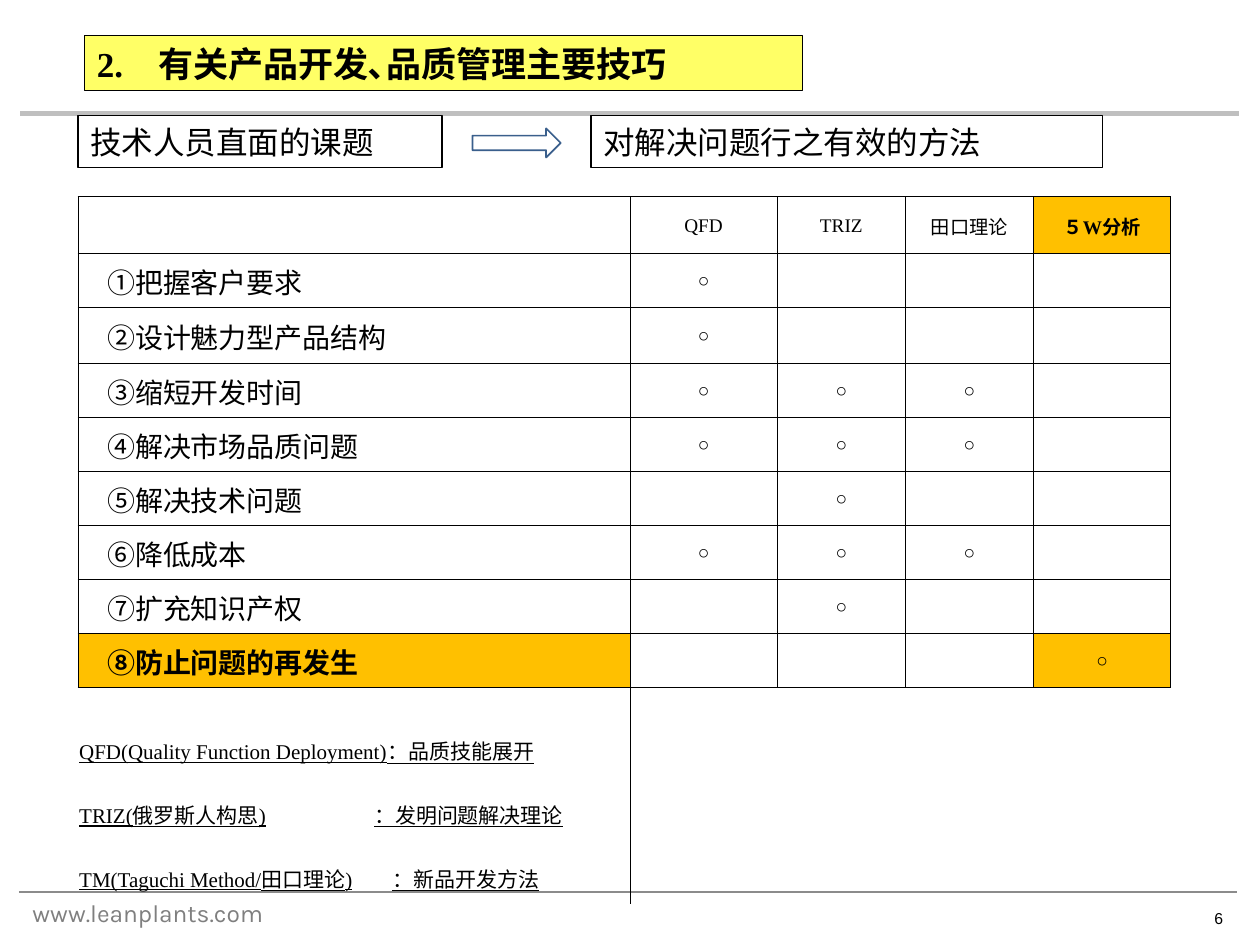
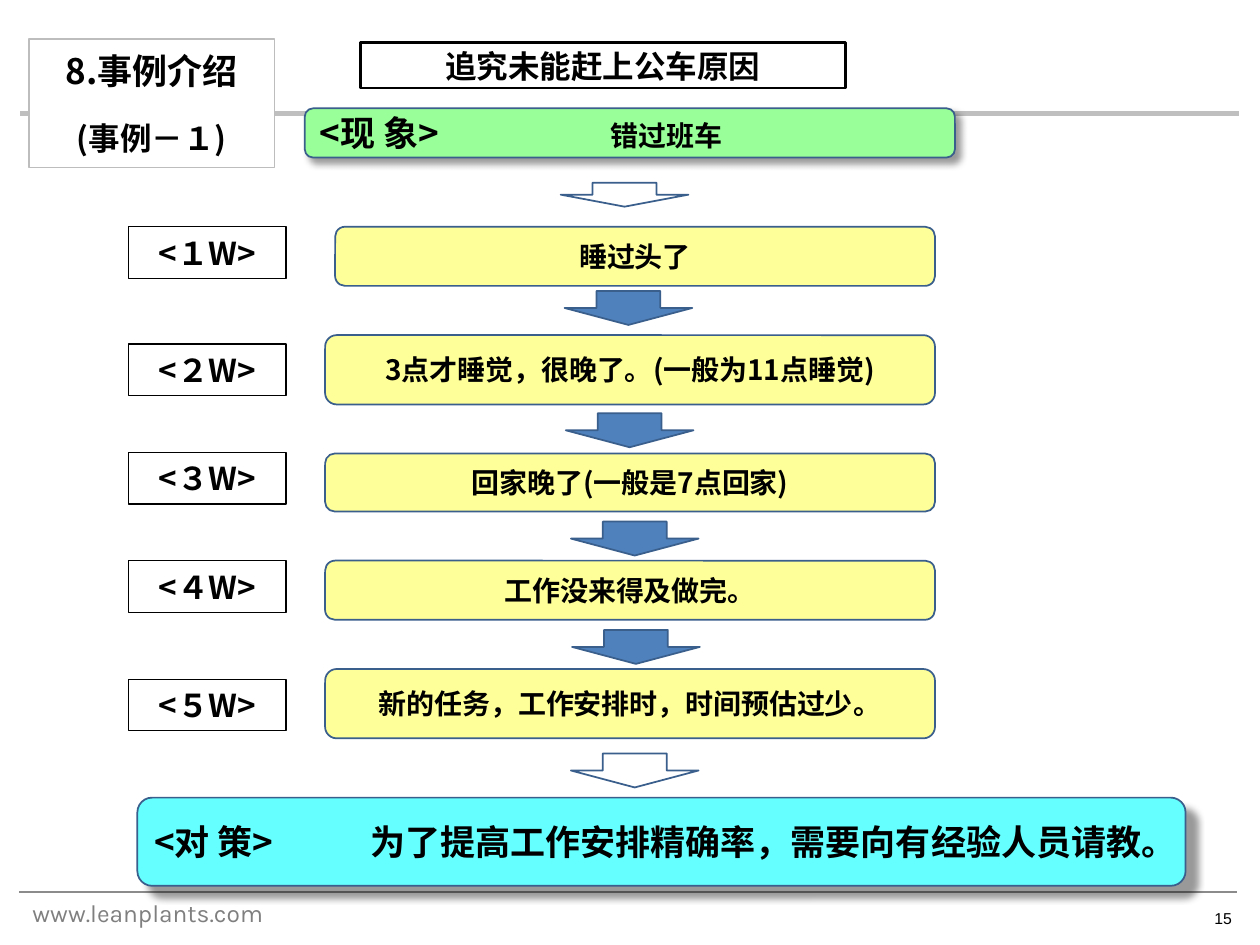
from lxml.etree import SubElement
from pptx import Presentation
from pptx.dml.color import RGBColor
from pptx.enum.shapes import MSO_CONNECTOR, MSO_SHAPE
from pptx.enum.text import MSO_ANCHOR, MSO_AUTO_SIZE, PP_ALIGN
from pptx.oxml.ns import qn
from pptx.util import Pt

COLORS = {
    "black": "000000", "white": "FFFFFF", "footer": "7F7F7F",
    "footer_rule": "8B8B8B", "title_rule": "BFBFBF", "title_edge": "BDBDBD",
    "title": "FFFF66", "highlight": "FFC000", "edge": "3A5F8C",
    "arrow": "4F81BD", "phenomenon": "99FF99", "cause": "FFFF99",
    "measure": "66FFFF",
}
CHINESE, JAPANESE = "Noto Sans CJK SC", "Noto Sans CJK JP"
SERIF = "Times New Roman"
LEFT, CENTER = PP_ALIGN.LEFT, PP_ALIGN.CENTER


def color(name):
    return RGBColor.from_string(COLORS[name])


class SlideBuilder:
    def __init__(self):
        self.deck = Presentation()
        self.deck.slide_width, self.deck.slide_height = Pt(720), Pt(540)
        self.page = None

    def new_page(self, number):
        """Start a title-only slide with the shared rules and footer."""
        self.page = self.deck.slides.add_slide(self.deck.slide_layouts[5])
        self.rule(10.8, 707, 509.8, "footer_rule", 1)
        self.rule(11.5, 707.8, 64.8, "title_rule", 3)
        self.label("www.leanplants.com", (11.5, 509.8, 168.5, 24.5),
                   {"size": Pt(14), "name": "Karla"}, "footer")
        self.label(number, (686.9, 515.5, 26.6, 19.4),
                   {"size": Pt(9), "name": "Arial"}, "black", wrap=False)

    def rule(self, left, right, y, line, width):
        connector = self.page.shapes.add_connector(
            MSO_CONNECTOR.STRAIGHT, Pt(left), Pt(y), Pt(right), Pt(y))
        connector.line.color.rgb = color(line)
        connector.line.width = Pt(width)
        SubElement(connector.element.spPr, qn("a:effectLst"))

    def label(self, text, place, style, ink, wrap=True):
        box = self.page.shapes.add_textbox(*map(Pt, place))
        box.text_frame.word_wrap = wrap
        self.fill_para(box.text_frame.paragraphs[0], text, style, ink=ink)

    def fill_para(self, para, spans, style, align=LEFT, ink="black", tab=None):
        """Fill a paragraph with a string or with (text, overrides) spans."""
        para.alignment = align
        if tab:
            stops = SubElement(para._p.get_or_add_pPr(), qn("a:tabLst"))
            SubElement(stops, qn("a:tab"), pos=str(Pt(tab)), algn="l")
        if isinstance(spans, str):
            spans = [(spans, {})]
        for text, overrides in spans:
            span = para.add_run()
            span.text = text
            for key, value in {**style, **overrides}.items():
                setattr(span.font, key, value)
            span.font.color.rgb = color(ink)
            east_asian = JAPANESE if span.font.name == JAPANESE else CHINESE
            SubElement(span._r.get_or_add_rPr(), qn("a:ea"), typeface=east_asian)

    def paint(self, box, fill, line, width):
        box.fill.solid()
        box.fill.fore_color.rgb = color(fill)
        box.line.color.rgb = color(line)
        box.line.width = Pt(width)

    def frame(self, box):
        frame = box.text_frame
        frame.word_wrap = True
        frame.auto_size = MSO_AUTO_SIZE.NONE
        frame.vertical_anchor = MSO_ANCHOR.MIDDLE
        return frame

    def title(self, place, lines, fill, line, align=LEFT, gap=0):
        """Format the title placeholder and lift it above the title rule."""
        box = self.page.shapes.title
        box.left, box.top, box.width, box.height = map(Pt, place)
        box.element.getparent().append(box.element)
        self.paint(box, fill, line, 0.75)
        frame = self.frame(box)
        for index, (text, style) in enumerate(lines):
            para = frame.add_paragraph() if index else frame.paragraphs[0]
            para.space_before = Pt(gap if index else 0)
            self.fill_para(para, text, style, align)

    def shape(self, kind, place, fill="white", line="edge", width=1):
        box = self.page.shapes.add_shape(kind, *map(Pt, place))
        box.shadow.inherit = False
        self.paint(box, fill, line, width)
        return box

    def box(self, place, spans, style, align=CENTER, width=0.75):
        box = self.shape(MSO_SHAPE.RECTANGLE, place, "white", "black", width)
        self.fill_para(self.frame(box).paragraphs[0], spans, style, align)

    def step(self, place, spans, style, fill="cause", align=CENTER, tab=None,
             shadow=None):
        """Draw a rounded process box; shadow is its distance."""
        box = self.shape(MSO_SHAPE.FLOWCHART_ALTERNATE_PROCESS, place, fill)
        frame = self.frame(box)
        if tab:
            frame.margin_right = 0
        self.fill_para(frame.paragraphs[0], spans, style, align, tab=tab)
        if shadow:
            effects = box.element.spPr.find(qn("a:effectLst"))
            outer = SubElement(effects, qn("a:outerShdw"), blurRad=str(Pt(4)),
                               dist=str(Pt(shadow)), dir="2700000",
                               algn="tl", rotWithShape="0")
            shade = SubElement(outer, qn("a:srgbClr"), val=COLORS["black"])
            SubElement(shade, qn("a:alpha"), val="40000")

    def table(self, place, columns, rows):
        frame = self.page.shapes.add_table(len(rows), len(columns), *map(Pt, place))
        table = frame.table
        table.first_row = table.horz_banding = False
        for column, width in zip(table.columns, columns):
            column.width = Pt(width)
        for row, height in zip(table.rows, rows):
            row.height = Pt(height)
        return table

    def cell(self, cell, text, style, borders, fill=None, align=CENTER,
             indent=0.7, tab=None):
        cell.margin_left = Pt(indent)
        cell.margin_top = cell.margin_right = Pt(0.7)
        cell.margin_bottom = 0
        cell.vertical_anchor = MSO_ANCHOR.MIDDLE
        para = cell.text_frame.paragraphs[0]
        if text:
            self.fill_para(para, text, style, align, tab=tab)
        else:
            SubElement(para._p, qn("a:endParaRPr"), sz="1100")
        properties = cell._tc.get_or_add_tcPr()
        for side in "LRTB":
            edge = SubElement(properties, qn(f"a:ln{side}"), w=str(Pt(0.5)))
            if side in borders:
                paint = SubElement(edge, qn("a:solidFill"))
                SubElement(paint, qn("a:srgbClr"), val=COLORS["black"])
            else:
                SubElement(edge, qn("a:noFill"))
        if fill:
            cell.fill.solid()
            cell.fill.fore_color.rgb = color(fill)
        else:
            cell.fill.background()


def build_techniques(builder):
    builder.new_page("6")
    plain = {"size": Pt(18), "name": "Arial", "bold": False}
    builder.box((44.6, 66.2, 208.1, 29.5), "技术人员直面的课题", plain, LEFT)
    builder.box((337.7, 66.2, 292.3, 29.5), "对解决问题行之有效的方法", plain, LEFT)
    builder.shape(MSO_SHAPE.RIGHT_ARROW, (270, 73.4, 50.4, 16.6))
    builder.title((48.2, 20.2, 410.4, 31.7),
                  [("2.　有关产品开发､品质管理主要技巧",
                    {"size": Pt(20), "name": SERIF, "bold": True})],
                  "title", "black")

    methods = ["QFD", "TRIZ", "田口理论", "５W分析"]
    # Each task lists the columns of the methods that suit it.
    tasks = [("①把握客户要求", [1]), ("②设计魅力型产品结构", [1]),
             ("③缩短开发时间", [1, 2, 3]), ("④解决市场品质问题", [1, 2, 3]),
             ("⑤解决技术问题", [2]), ("⑥降低成本", [1, 2, 3]),
             ("⑦扩充知识产权", [2]), ("⑧防止问题的再发生", [4])]
    notes = [("", None), ("QFD(Quality Function Deployment)：品质技能展开", None),
             ("TRIZ(俄罗斯人构思)\t：发明问题解决理论", 168.5),
             ("TM(Taguchi Method/田口理论)\t：新品开发方法", 179)]
    heights = [32.6, 30.9, 31.9] + [30.9] * 6 + [20.2, 30.9, 41.8, 30.9]
    table = builder.table((44.6, 112.3, 624.5, 404),
                          [315.4, 84.2, 73.2, 73.2, 78.5], heights)
    small = {"size": Pt(11), "name": SERIF, "bold": False}
    for column, method in enumerate([""] + methods):
        last = column == len(methods)
        builder.cell(table.cell(0, column), method, {**small, "bold": last},
                     "LRTB", "highlight" if last else "white")
    for row, (task, marks) in enumerate(tasks, 1):
        last = row == len(tasks)
        builder.cell(table.cell(row, 0), task,
                     {**small, "size": Pt(16), "bold": last}, "LRTB",
                     "highlight" if last else "white", LEFT, indent=16.7)
        for column in range(1, 5):
            marked = column in marks
            builder.cell(table.cell(row, column), "○" if marked else "", small,
                         "LRTB", "highlight" if last and marked else "white")
    note_style = {**small, "size": Pt(12), "underline": True}
    for row, (note, tab) in enumerate(notes, len(tasks) + 1):
        for column in range(5):
            borders = {0: "R", 1: "L"}.get(column, "")
            if not note:
                borders += "T"
            builder.cell(table.cell(row, column), "" if column else note,
                         note_style, borders, align=LEFT, tab=tab)


def build_case(builder):
    builder.new_page("15")
    style = {"size": Pt(16), "name": CHINESE, "bold": True}
    large = {**style, "size": Pt(20)}
    tag_style = {"size": Pt(18), "name": JAPANESE, "bold": True}
    japanese = {"name": JAPANESE}
    builder.box((205.9, 24.5, 277.2, 25.9), "追究未能赶上公车原因",
                {**style, "size": Pt(18)}, width=1.5)
    builder.step((174.2, 61.9, 371.5, 28.1),
                 [("<现 象>\t", {"size": Pt(20)}), ("错过班车", {})],
                 style, "phenomenon", LEFT, tab=166.5, shadow=4)

    # Spans, left, top, height, top of the tag.
    causes = [
        ("睡过头了", 191.5, 129.6, 33.8, 129.6),
        ("3点才睡觉，很晚了。(一般为11点睡觉)", 185.8, 191.5, 39.6, 196.6),
        ("回家晚了(一般是7点回家)", 185.8, 259.2, 33.1, 258.5),
        ([("工作没", japanese), ("来得及", {}), ("做完。", japanese)],
         185.8, 320.4, 33.8, 320.4),
        ([("新的任务，工作安排时，时间预估过少", {}), ("。", japanese)],
         185.8, 382.3, 39.6, 388.1),
    ]
    for digit, (spans, left, top, height, tag_top) in zip("１２３４５", causes):
        builder.step((left, top, 534.3 - left, height), spans, style)
        builder.box((73.4, tag_top, 90, 29.5), f"<{digit}W>", tag_style)

    builder.step((78.5, 455.8, 599, 50.4),
                 "<对 策>\t为了提高工作安排精确率，需要向有经验人员请教。",
                 large, "measure", LEFT, tab=123.5, shadow=9)
    arrows = [(320.4, 104.4, 13.7, "white"), (322.6, 166.3, 19.4, "arrow"),
              (323.3, 236.2, 19.4, "arrow"), (326.2, 298.1, 19.4, "arrow"),
              (326.9, 360, 19.4, "arrow"), (326.2, 430.6, 19.4, "white")]
    for left, top, height, fill in arrows:
        builder.shape(MSO_SHAPE.DOWN_ARROW, (left, top, 73, height), fill)
    builder.title((16.6, 22.3, 140.4, 73.4),
                  [("8.事例介绍", {**tag_style, "size": Pt(20)}),
                   ("(事例－１)", tag_style)],
                  "white", "title_edge", CENTER, gap=16)


def main():
    builder = SlideBuilder()
    build_techniques(builder)
    build_case(builder)
    builder.deck.save("out.pptx")


if __name__ == "__main__":
    main()
